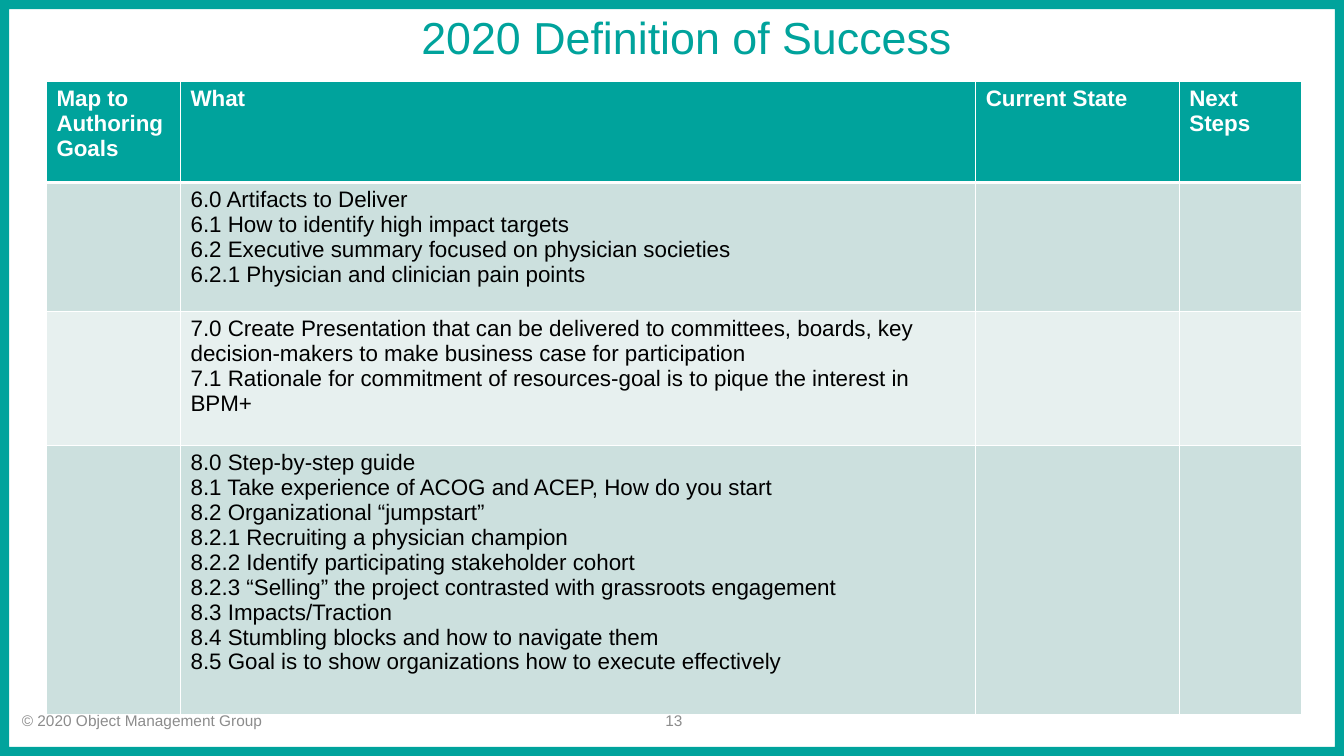
from lxml import etree
from pptx import Presentation
from pptx.dml.color import RGBColor
from pptx.enum.shapes import MSO_SHAPE as Shape
from pptx.enum.text import MSO_ANCHOR as Anchor, PP_ALIGN as Align
from pptx.oxml.ns import qn
from pptx.util import Cm, Pt

TEAL = RGBColor(0x00, 0xA3, 0x9C)
DARK_BAND = RGBColor(0xCC, 0xE0, 0xDE)
LIGHT_BAND = RGBColor(0xE7, 0xF0, 0xEF)
WHITE = RGBColor(0xFF, 0xFF, 0xFF)
BLACK = RGBColor(0x00, 0x00, 0x00)
GREY = RGBColor(0x8C, 0x8C, 0x8C)

TITLE_FONT = {"name": "Arial", "size": Pt(32)}
FOOTER_FONT = {"name": "Arial", "size": Pt(11)}
HEADER_FONT = {"name": "Arial", "size": Pt(16), "bold": True}
BODY_FONT = {"name": "Arial", "size": Pt(16), "bold": False}

COLUMN_WIDTHS = [3.38, 20.04, 5.13, 3.07]
ROW_HEIGHTS = [2.54, 3.25, 3.38, 6.78]
HEADINGS = ["Map to Authoring Goals", "What", "Current State", "Next Steps"]
DELIVERABLES = [
    [
        "6.0 Artifacts to Deliver",
        "6.1 How to identify high impact targets",
        "6.2 Executive summary focused on physician societies",
        "6.2.1 Physician and clinician pain points",
    ],
    [
        "7.0 Create Presentation that can be delivered to committees, boards, key "
        "decision-makers to make business case for participation",
        "7.1 Rationale for commitment of resources-goal is to pique the interest in BPM+",
    ],
    [
        "8.0 Step-by-step guide",
        "8.1 Take experience of ACOG and ACEP, How do you start",
        "8.2 Organizational “jumpstart”",
        "8.2.1 Recruiting a physician champion",
        "8.2.2 Identify participating stakeholder cohort",
        "8.2.3 “Selling” the project contrasted with grassroots engagement",
        "8.3 Impacts/Traction",
        "8.4 Stumbling blocks and how to navigate them",
        "8.5 Goal is to show organizations how to execute effectively",
    ],
]


def write_lines(text_frame, lines, font_format, color, align=Align.LEFT, spacing=1.0):
    text_frame.text = "\n".join(lines)
    for paragraph in text_frame.paragraphs:
        paragraph.alignment = align
        paragraph.line_spacing = spacing
        for name, value in font_format.items():
            setattr(paragraph.font, name, value)
        paragraph.font.color.rgb = color


def add_label(slide, box, text, font_format, color, align=Align.LEFT, spacing=1.0):
    label = slide.shapes.add_textbox(*map(Cm, box)).text_frame
    label.word_wrap = True
    label.vertical_anchor = Anchor.MIDDLE
    write_lines(label, [text], font_format, color, align, spacing)


def add_border_frame(slide, width, height):
    border = slide.shapes.add_shape(Shape.FRAME, 0, 0, width, height)
    border.adjustments[0] = 0.012
    border.shadow.inherit = False
    border.fill.solid()
    border.fill.fore_color.rgb = TEAL
    border.line.fill.background()


def set_borders(cell, widths):
    """Draw white cell edges; widths maps L, R, T and B to points."""
    properties = cell._tc.get_or_add_tcPr()
    for position, side in enumerate("LRTB"):
        edge = etree.Element(qn(f"a:ln{side}"), w=str(Pt(widths[side])))
        fill = etree.SubElement(edge, qn("a:solidFill"))
        etree.SubElement(fill, qn("a:srgbClr"), val=str(WHITE))
        properties.insert(position, edge)


def fill_cell(cell, lines, font_format, color, background, widths):
    write_lines(cell.text_frame, lines, font_format, color)
    cell.fill.solid()
    cell.fill.fore_color.rgb = background
    set_borders(cell, widths)


def add_success_table(slide):
    frame = slide.shapes.add_table(
        len(ROW_HEIGHTS), len(COLUMN_WIDTHS), Cm(1.17), Cm(2.06),
        Cm(sum(COLUMN_WIDTHS)), Cm(sum(ROW_HEIGHTS)))
    table = frame.table
    for column, width in zip(table.columns, COLUMN_WIDTHS):
        column.width = Cm(width)
    for row, height in zip(table.rows, ROW_HEIGHTS):
        row.height = Cm(height)

    # Header row with a thick rule below it
    thin = dict.fromkeys("LRTB", 1)
    for cell, heading in zip(table.rows[0].cells, HEADINGS):
        fill_cell(cell, [heading], HEADER_FONT, WHITE, TEAL, {**thin, "B": 3})

    # Banded rows, with text in the "What" column only
    for index, deliverables in enumerate(DELIVERABLES):
        band = LIGHT_BAND if index % 2 else DARK_BAND
        widths = thin if index else {**thin, "T": 3}
        for column, cell in enumerate(table.rows[index + 1].cells):
            lines = deliverables if HEADINGS[column] == "What" else []
            fill_cell(cell, lines, BODY_FONT, BLACK, band, widths)


def main():
    deck = Presentation()
    deck.slide_width, deck.slide_height = Cm(33.87), Cm(19.05)
    slide = deck.slides.add_slide(deck.slide_layouts[6])

    # Border and title
    add_border_frame(slide, deck.slide_width, deck.slide_height)
    add_label(slide, (3.38, 0.23, 28.17, 1.55), "2020 Definition of Success ",
              TITLE_FONT, TEAL, Align.CENTER, 0.9)

    # Table
    add_success_table(slide)

    # Footer
    add_label(slide, (0.3, 17.65, 11.07, 1.02), "© 2020 Object Management Group",
              FOOTER_FONT, GREY)
    add_label(slide, (16.41, 17.65, 1.04, 1.02), "13", FOOTER_FONT, GREY, Align.RIGHT)

    deck.save("out.pptx")


if __name__ == "__main__":
    main()
